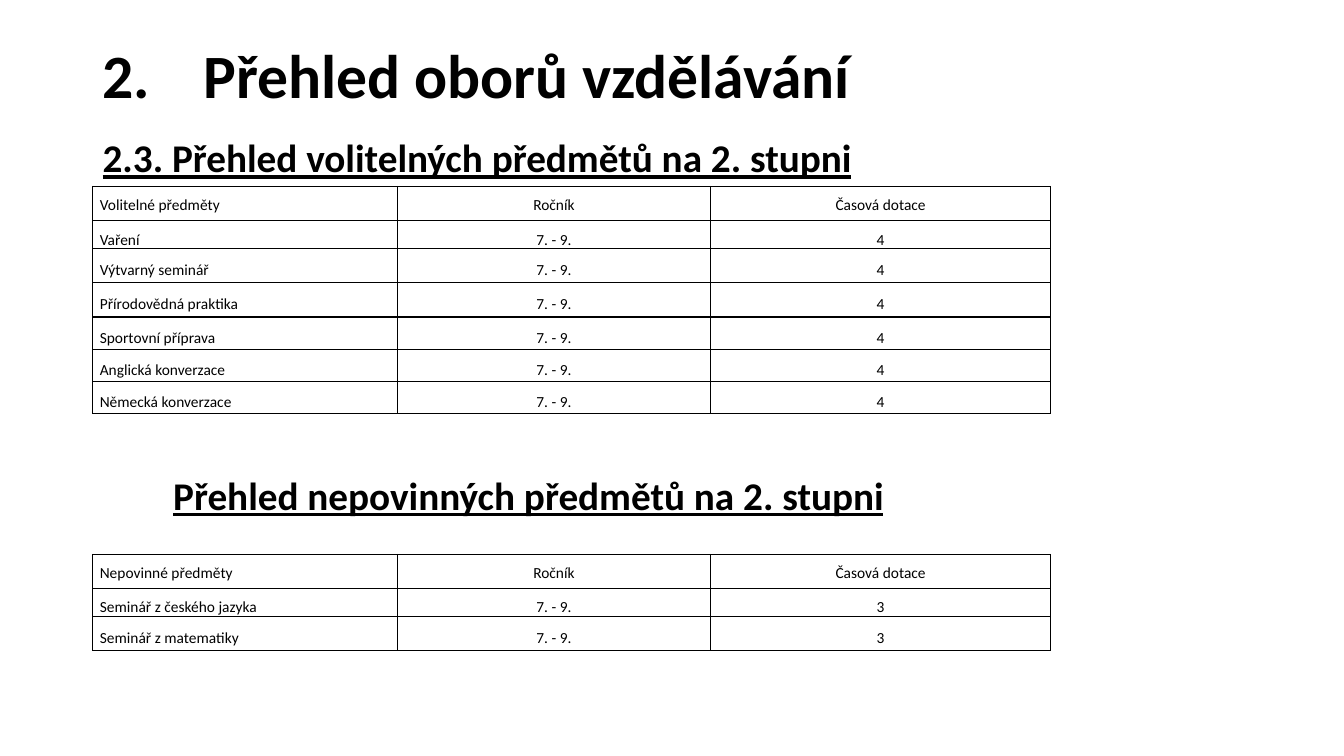
import dataclasses

import pptx
import pptx.dml.color
import pptx.enum.text
import pptx.oxml
import pptx.oxml.ns
import pptx.util

Inches = pptx.util.Inches
Pt = pptx.util.Pt
Align = pptx.enum.text.PP_ALIGN
Anchor = pptx.enum.text.MSO_ANCHOR


@dataclasses.dataclass(frozen=True)
class Theme:
    font: str = "Calibri"
    ink: str = "000000"
    paper: str = "FFFFFF"
    title_size: int = 44
    heading_size: int = 28
    cell_size: int = 11
    border_width: int = 1


theme = Theme()


def write(para, text, size, bold=False, underline=False, align=Align.LEFT,
          spacing=0.9, before=0, after=0, indent=0):
    para.alignment = align
    para.line_spacing = spacing
    para.space_before = Pt(before)
    para.space_after = Pt(after)
    if indent:
        para._p.get_or_add_pPr().set("marL", str(Inches(indent)))
    span = para.add_run()
    span.text = text
    span.font.name = theme.font
    span.font.size = Pt(size)
    span.font.bold = bold
    span.font.underline = underline
    span.font.color.rgb = pptx.dml.color.RGBColor.from_string(theme.ink)


def add_border(cell):
    properties = cell._tc.get_or_add_tcPr()
    for position, side in enumerate(("lnL", "lnR", "lnT", "lnB")):
        line = pptx.oxml.parse_xml(
            f'<a:{side} {pptx.oxml.ns.nsdecls("a")} w="{Pt(theme.border_width)}">'
            f'<a:solidFill><a:srgbClr val="{theme.ink}"/></a:solidFill></a:{side}>')
        properties.insert(position, line)


deck = pptx.Presentation()
deck.slide_width = Inches(13.33)
deck.slide_height = Inches(7.5)
page = deck.slides.add_slide(deck.slide_layouts[6])

# Title
title_box = page.shapes.add_textbox(Inches(0.92), Inches(0.4), Inches(11.5), Inches(1.45))
title_box.text_frame.word_wrap = True
write(title_box.text_frame.paragraphs[0], "2. \tPřehled oborů vzdělávání",
      theme.title_size, bold=True)

# Headings above the two tables
heading_box = page.shapes.add_textbox(Inches(0.92), Inches(1.33), Inches(11.5), Inches(5.91))
heading_box.text_frame.word_wrap = True
write(heading_box.text_frame.paragraphs[0], "2.3. Přehled volitelných předmětů na 2. stupni",
      theme.heading_size, bold=True, underline=True)
write(heading_box.text_frame.add_paragraph(), "Přehled nepovinných předmětů na 2. stupni",
      theme.heading_size, bold=True, underline=True, before=211, indent=0.7)

# Subject tables: top, first header, weekly hours, subjects, row heights
column_widths = (3.02, 3.11, 3.37)
subject_tables = (
    (1.85, "Volitelné předměty", "4",
     ("Vaření", "Výtvarný seminář", "Přírodovědná praktika", "Sportovní příprava",
      "Anglická konverzace", "Německá konverzace"),
     (0.34, 0.26, 0.34, 0.34, 0.32, 0.32, 0.32)),
    (5.5, "Nepovinné předměty", "3",
     ("Seminář z českého jazyka", "Seminář z matematiky"),
     (0.34, 0.26, 0.34)),
)

for top, header, hours, subjects, row_heights in subject_tables:
    rows = [(header, "Ročník", "Časová dotace")]
    rows += [(subject, "7. - 9.", hours) for subject in subjects]
    table = page.shapes.add_table(
        len(rows), len(column_widths), Inches(0.92), Inches(top),
        Inches(sum(column_widths)), Inches(sum(row_heights))).table
    table.first_row = False
    table.horz_banding = False
    for column, width in zip(table.columns, column_widths):
        column.width = Inches(width)

    for row_index, (row, height) in enumerate(zip(rows, row_heights)):
        table.rows[row_index].height = Inches(height)
        is_header = row_index == 0
        for column_index, text in enumerate(row):
            cell = table.cell(row_index, column_index)
            cell.margin_left = cell.margin_right = Inches(0.07)
            cell.margin_top = cell.margin_bottom = 0
            cell.vertical_anchor = Anchor.TOP if is_header else Anchor.MIDDLE
            cell.fill.solid()
            cell.fill.fore_color.rgb = pptx.dml.color.RGBColor.from_string(theme.paper)
            add_border(cell)
            write(cell.text_frame.paragraphs[0], text, theme.cell_size,
                  align=Align.CENTER if column_index else Align.JUSTIFY,
                  spacing=1.5, after=10 if is_header else 0)

deck.save("out.pptx")
